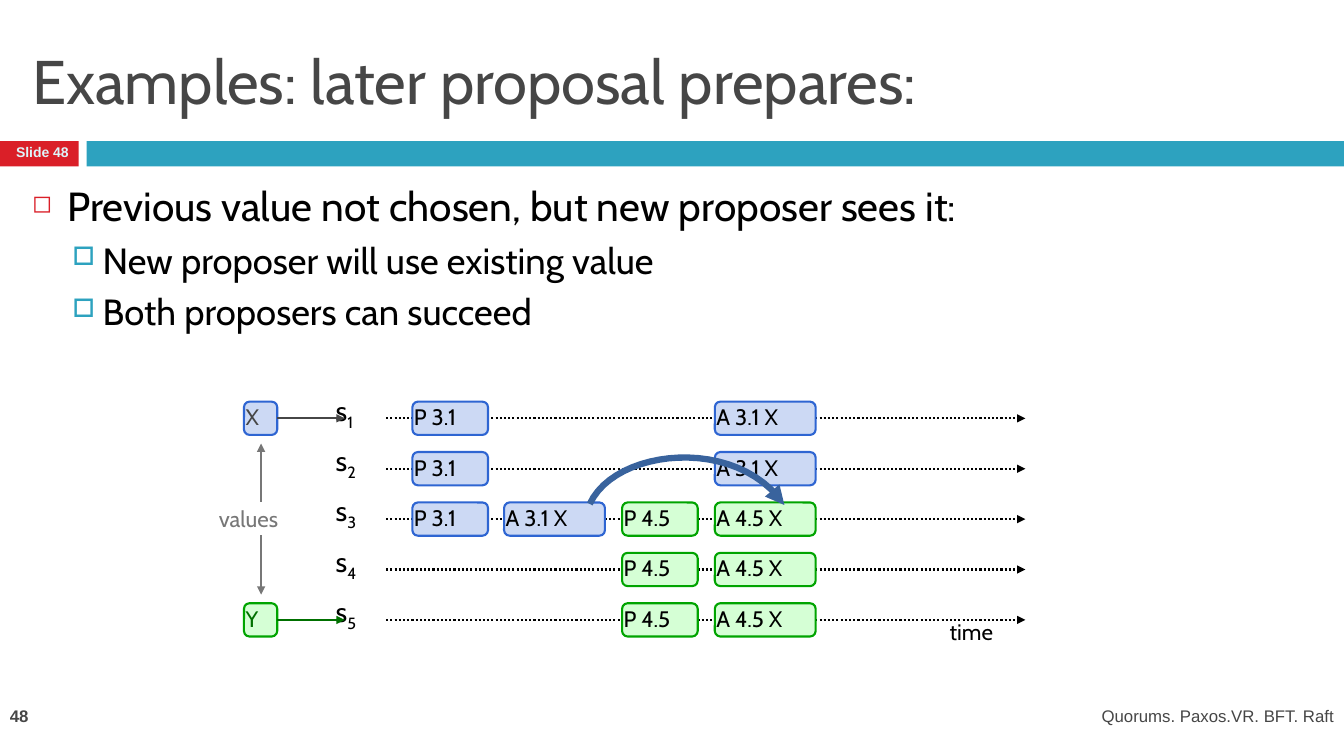
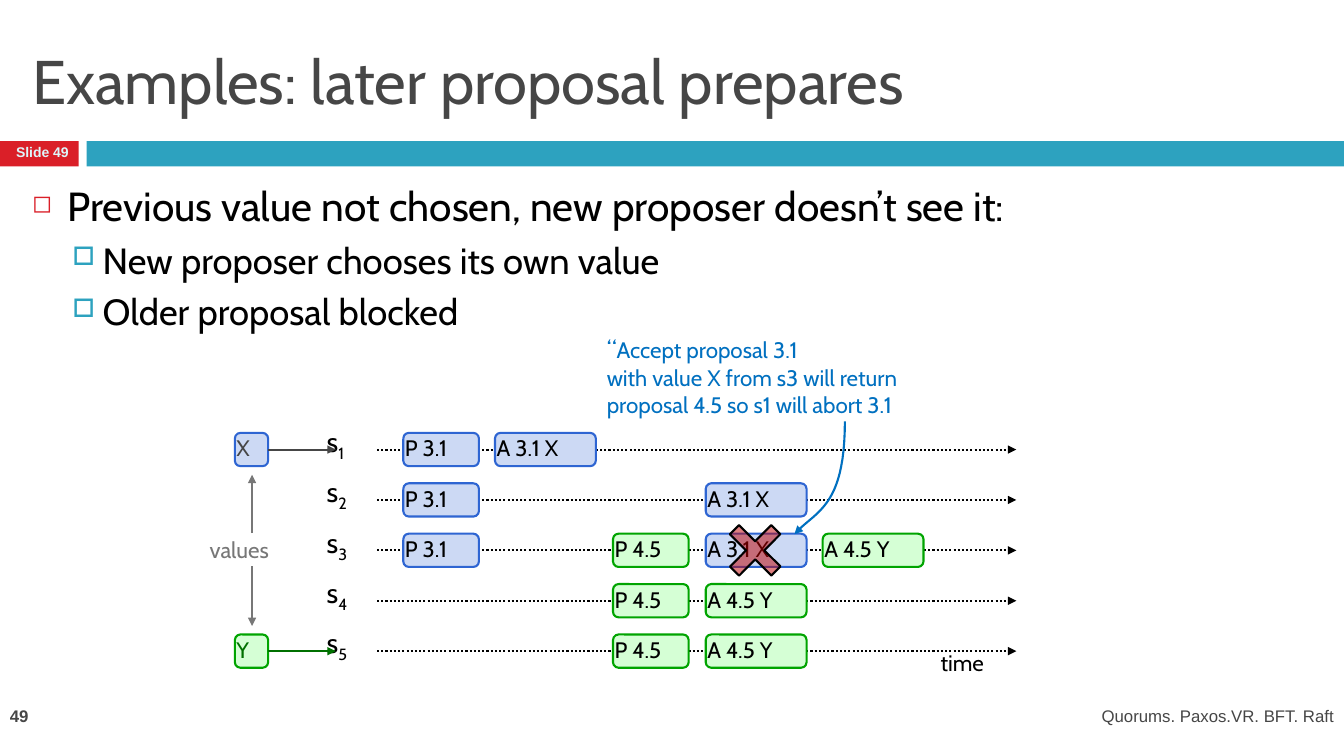
"""Builds two slides on competing proposals with server timelines."""
from dataclasses import dataclass
from typing import Any

from lxml import etree
from pptx import Presentation
from pptx import util as u
from pptx.dml import color
from pptx.enum import dml, shapes, text
from pptx.oxml import ns

HUES = {
    "red": "DA1F28", "teal": "2DA2BF", "dark": "464646", "pale": "DEF5FA",
    "black": "000000", "grey": "777777", "blue": "CCD9F4", "navy": "2E65D2",
    "mint": "D5FFD5", "green": "00A400", "moss": "007000", "arc": "39639D",
    "note": "0070C0", "cross": "C00000",
}
BODY, PLAIN = "Cabin", "Arial"
COLS = (1.67, 2.58, 3.75, 4.67, 5.83)
STEP, SIDE = 0.5, 0.33
FLUSH = dict.fromkeys(
    ("margin_left", "margin_right", "margin_top", "margin_bottom"), 0)
MID = {"vertical_anchor": text.MSO_ANCHOR.MIDDLE}
RIGHT = {"alignment": text.PP_ALIGN.RIGHT}
Point = tuple[float, float]


@dataclass
class Style:
    """Look of a run."""
    size: float
    hue: str = "black"
    face: str = BODY
    bold: bool = False


@dataclass
class Bullet:
    """Look of a bullet level."""
    mark: str
    hue: str
    scale: int
    left: float
    hang: float
    gap: float
    size: float


@dataclass
class Block:
    """A message in a column and a server row."""
    label: str
    col: int
    row: int


@dataclass
class Page:
    """What differs between the slides."""
    num: int
    title: str
    lines: tuple[str, ...]
    left: float
    top: float
    blocks: tuple[Block, ...]


HEAD = Bullet("◻", "red", 60, 0.35, -0.35, 7, 29)
SUB = Bullet("□", "teal", 70, 0.7, -0.3, 5.5, 26)
SMALL = Style(16)
FIRST = tuple(Block("P 3.1", 0, row) for row in range(3))
NEXT = tuple(Block("P 4.5", 2, row) for row in range(2, 5))
PAGES = (
    Page(48, "Examples: later proposal prepares:",
         ("Previous value not chosen, but new proposer sees it:",
          "New proposer will use existing value", "Both proposers can succeed"),
         2.42, 4.15,
         FIRST + NEXT + (Block("A 3.1 X", 1, 2),)
         + tuple(Block("A 3.1 X", 3, row) for row in range(2))
         + tuple(Block("A 4.5 X", 3, row) for row in range(2, 5))),
    Page(49, "Examples: later proposal prepares",
         ("Previous value not chosen, new proposer doesn’t see it:",
          "New proposer chooses its own value", "Older proposal blocked"),
         2.33, 4.46,
         FIRST + NEXT + (Block("A 3.1 X", 1, 0), Block("A 4.5 Y", 4, 2))
         + tuple(Block("A 3.1 X", 3, row) for row in (1, 2))
         + tuple(Block("A 4.5 Y", 3, row) for row in (3, 4))),
)


def rgb(hue: str) -> color.RGBColor:
    """Look up a colour."""
    return color.RGBColor.from_string(HUES[hue])


def put(item: Any, form: dict[str, Any]) -> None:
    """Set attributes from format values."""
    for key, val in form.items():
        setattr(item, key, val)


def node(base: Any, tag: str, **attrs: str) -> Any:
    """Append a drawing element."""
    return etree.SubElement(base, ns.qn(f"a:{tag}"), attrs)


def write(para: Any, words: str, style: Style) -> Any:
    """Add a styled run."""
    run = para.add_run()
    run.text = words
    put(run.font, {"size": u.Pt(style.size), "name": style.face, "bold": style.bold})
    run.font.color.rgb = rgb(style.hue)
    return run


def label(slide: Any, box: tuple[float, ...], words: str, style: Style,
          frame: dict[str, Any] | None = None,
          form: dict[str, Any] | None = None) -> Any:
    """Add a text box and return its paragraph."""
    area = slide.shapes.add_textbox(*map(u.Inches, box)).text_frame
    put(area, {"word_wrap": True, **(frame or {})})
    para = area.paragraphs[0]
    put(para, form or {})
    write(para, words, style)
    return para


def shape(slide: Any, kind: Any, box: tuple[float, ...], fill: str,
          edge: str | None = None) -> Any:
    """Add a filled shape."""
    item = slide.shapes.add_shape(kind, *map(u.Inches, box))
    item.shadow.inherit = False
    item.fill.solid()
    item.fill.fore_color.rgb = rgb(fill)
    if edge:
        item.line.color.rgb = rgb(edge)
        item.line.width = u.Pt(1.5)
    else:
        item.line.fill.background()
    return item


def tip(item: Any, hue: str, width: float = 1.5, dash: Any = None) -> None:
    """Style a line and give it an arrowhead."""
    item.line.color.rgb = rgb(hue)
    put(item.line, {"width": u.Pt(width), "dash_style": dash})
    node(item.line._get_or_add_ln(), "tailEnd", type="triangle")


def arrow(slide: Any, start: Point, end: Point, hue: str, dash: Any = None,
          source: Any = None) -> None:
    """Add a straight arrow, joined to the right of a source if given."""
    item = slide.shapes.add_connector(
        shapes.MSO_CONNECTOR.STRAIGHT, *map(u.Inches, (*start, *end)))
    if source is not None:
        item.begin_connect(source, 3)
    tip(item, hue, dash=dash)
    node(item._element.spPr, "effectLst")


def curve(slide: Any, ends: tuple[Point, ...], hue: str, width: float) -> None:
    """Add a curved arrow along a cubic through four control points."""
    count = 24
    dots = []
    for step in range(count + 1):
        t = step / count
        parts = ((1 - t) ** 3, 3 * t * (1 - t) ** 2, 3 * t * t * (1 - t), t ** 3)
        dots.append(tuple(u.Inches(sum(p * end[axis] for p, end in zip(parts, ends)))
                          for axis in (0, 1)))
    maker = slide.shapes.build_freeform(*dots[0], scale=1.0)
    maker.add_line_segments(dots[1:], close=False)
    item = maker.convert_to_shape()
    item.shadow.inherit = False
    item.fill.background()
    tip(item, hue, width)


def block(slide: Any, box: tuple[float, ...], words: str, blue: bool,
          hue: str = "black") -> Any:
    """Add a rounded message box."""
    fill, edge = ("blue", "navy") if blue else ("mint", "green")
    item = shape(slide, shapes.MSO_SHAPE.ROUNDED_RECTANGLE, box, fill, edge)
    put(item.text_frame, {**FLUSH, **MID})
    para = item.text_frame.paragraphs[0]
    put(para, {"alignment": text.PP_ALIGN.LEFT, "line_spacing": u.Pt(17)})
    write(para, words, Style(16, hue))
    return item


def point(para: Any, words: str, look: Bullet, level: int) -> None:
    """Fill a bulleted paragraph."""
    put(para, {"level": level, "space_before": u.Pt(look.gap)})
    props = para._p.get_or_add_pPr()
    props.set("marL", str(u.Inches(look.left)))
    props.set("indent", str(u.Inches(look.hang)))
    node(node(props, "buClr"), "srgbClr", val=HUES[look.hue])
    node(props, "buSzPct", val=str(look.scale * 1000))
    node(props, "buChar", char=look.mark)
    write(para, words, Style(look.size))


def frame(slide: Any, page: Page) -> None:
    """Draw bands, title, footers and bullets."""
    for left, width, hue in ((0, 0.78, "red"), (0.86, 12.47, "teal")):
        shape(slide, shapes.MSO_SHAPE.RECTANGLE, (left, 1.4, width, 0.25), hue)
    label(slide, (0.22, 0.25, 12.89, 1.08), page.title, Style(44, "dark"), MID)
    label(slide, (0, 1.37, 0.78, 0.33), f"Slide {page.num}",
          Style(10, "pale", PLAIN, True), form=RIGHT)
    area = slide.shapes.add_textbox(
        *map(u.Inches, (0.22, 1.75, 12.89, 5.58))).text_frame
    area.word_wrap = True
    for rank, words in enumerate(page.lines):
        para = area.add_paragraph() if rank else area.paragraphs[0]
        point(para, words, SUB if rank else HEAD, min(rank, 1))
    label(slide, (8.22, 6.95, 5.11, 0.4), "Quorums. Paxos.VR. BFT. Raft",
          Style(12, "dark", PLAIN), form=RIGHT)
    label(slide, (0, 6.95, 2.89, 0.4), str(page.num), Style(12, "dark", PLAIN, True))


def chart(slide: Any, page: Page) -> None:
    """Draw the server timelines and their messages."""
    x, y = page.left, page.top
    rows = [y + STEP * rank for rank in range(5)]
    for row in rows:
        arrow(slide, (x + 1.41, row), (x + 7.75, row), "black",
              dml.MSO_LINE.ROUND_DOT)
    label(slide, (x + 7, y + 1.98, 0.67, 0.27), "time", SMALL, FLUSH)
    for rank, row in enumerate(rows, 1):
        para = label(slide, (x + 0.91, row - 0.25, 0.5, 0.34), "s", Style(20), FLUSH)
        low = write(para, str(rank), Style(20))
        low._r.get_or_add_rPr().set("baseline", "-25000")
    for item in page.blocks:
        width = 0.75 if item.label.startswith("P") else 1
        block(slide, (x + COLS[item.col], rows[item.row] - SIDE / 2, width, SIDE),
              item.label, "3.1" in item.label)
    for words, row, hue in (("X", rows[0], "dark"), ("Y", rows[-1], "moss")):
        box = block(slide, (x, row - SIDE / 2, SIDE, SIDE), words, words == "X", hue)
        arrow(slide, (x + SIDE, row), (x + 1, row), hue, source=box)
    label(slide, (x - 0.25, y + 0.86, 0.83, 0.27), "values", Style(16, "grey"), FLUSH)
    for start, end in ((0.83, 0.25), (1.16, 1.75)):
        arrow(slide, (x + 0.17, y + start), (x + 0.17, y + end), "grey")


def reuse(slide: Any) -> None:
    """Show the seen value passing to the new proposal."""
    curve(slide, ((5.85, 5), (6.1, 4.45), (7.31, 4.32), (7.78, 5.01)), "arc", 4.5)


def reject(slide: Any) -> None:
    """Cross out the old proposal and explain why."""
    cross = shape(slide, shapes.MSO_SHAPE.CROSS, (7.2, 5.17, 0.58, 0.58),
                  "cross", "black")
    cross.rotation = 44.8
    cross.adjustments[0] = 0.39
    tint = cross._element.spPr.find(f"{ns.qn('a:solidFill')}/{ns.qn('a:srgbClr')}")
    node(tint, "alpha", val="50000")
    para = label(slide, (5.92, 3.26, 3.67, 1.04), "“", Style(18, "note"))
    write(para, "Accept proposal 3.1", Style(16, "note"))
    para.add_line_break()
    write(para, "with value X from s3 will return proposal 4.5 so s1 will abort 3.1",
          Style(16, "note"))
    curve(slide, ((8.38, 4.18), (8.38, 5.05), (8.08, 5.07), (7.88, 5.3)), "note", 1.5)


def main() -> None:
    """Build and save the deck."""
    deck = Presentation()
    put(deck, {"slide_width": u.Inches(13.33), "slide_height": u.Inches(7.5)})
    for page, extra in zip(PAGES, (reuse, reject)):
        slide = deck.slides.add_slide(deck.slide_layouts[6])
        frame(slide, page)
        chart(slide, page)
        extra(slide)
    deck.save("out.pptx")


if __name__ == "__main__":
    main()
